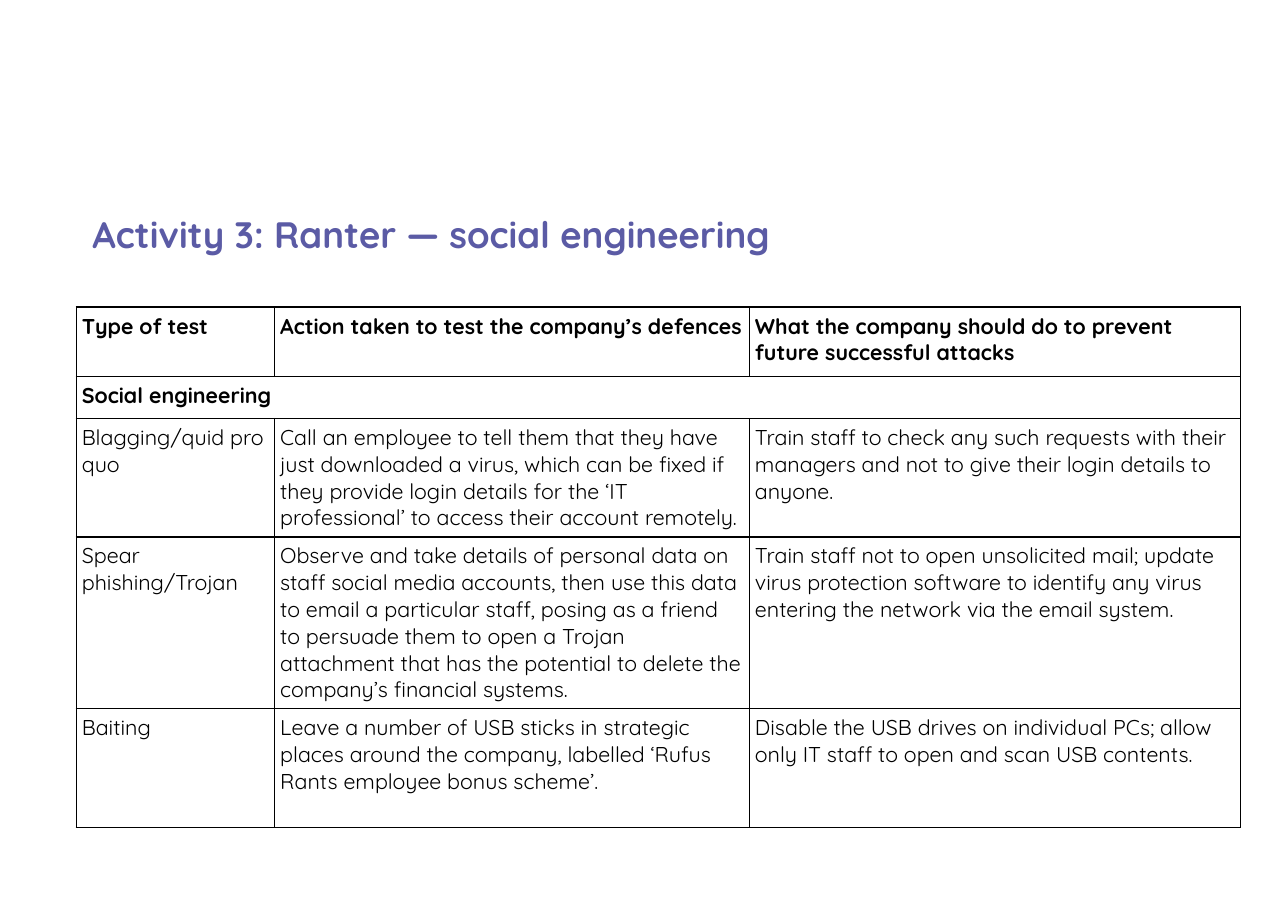
from lxml.etree import SubElement
from pptx import Presentation
from pptx.dml.color import RGBColor
from pptx.oxml.ns import qn
from pptx.util import Pt

FONT = "Quicksand"
PURPLE = RGBColor(0x5B, 0x5B, 0xA5)
BLACK = RGBColor(0, 0, 0)

COLUMN_WIDTHS = (129.6, 310.3, 321.1)
ROW_HEIGHTS = (45.5, 27.4, 77.4, 112.2, 77.6)
SECTION_ROW = 1
TESTS = (
    ("Type of test",
     "Action taken to test the company’s defences",
     "What the company should do to prevent future successful attacks"),
    ("Social engineering",),
    ("Blagging/quid pro quo",
     "Call an employee to tell them that they have just downloaded a virus, "
     "which can be fixed if they provide login details for the "
     "‘IT professional’ to access their account remotely.",
     "Train staff to check any such requests with their managers and not to "
     "give their login details to anyone."),
    ("Spear phishing/Trojan",
     "Observe and take details of personal data on staff social media "
     "accounts, then use this data to email a particular staff, posing as a "
     "friend to persuade them to open a Trojan attachment that has the "
     "potential to delete the company’s financial systems.",
     "Train staff not to open unsolicited mail; update virus protection "
     "software to identify any virus entering the network via the email "
     "system."),
    ("Baiting",
     "Leave a number of USB sticks in strategic places around the company, "
     "labelled ‘Rufus Rants employee bonus scheme’.",
     "Disable the USB drives on individual PCs; allow only IT staff to open "
     "and scan USB contents."),
)


def write(frame, text, size=14, color=BLACK, bold=False, spacing=None, before=None):
    paragraph = frame.paragraphs[0]
    paragraph.line_spacing = spacing
    paragraph.space_before = None if before is None else Pt(before)
    run = paragraph.add_run()
    run.text = text
    run.font.name = FONT
    run.font.size = Pt(size)
    run.font.bold = bold
    run.font.color.rgb = color


def set_margins(holder, margin):
    """Give a cell or text frame the same margin on all four sides."""
    holder.margin_left = holder.margin_right = Pt(margin)
    holder.margin_top = holder.margin_bottom = Pt(margin)


def outline(cell, width=1):
    """Draw all four borders of a cell; they must come before its fill."""
    properties = cell._tc.get_or_add_tcPr()
    for side in ("a:lnL", "a:lnR", "a:lnT", "a:lnB"):
        border = SubElement(properties, qn(side), w=str(Pt(width)))
        fill = SubElement(border, qn("a:solidFill"))
        SubElement(fill, qn("a:srgbClr"), val=str(BLACK))


def add_title(slide, text):
    frame = slide.shapes.add_textbox(Pt(53.3), Pt(126.7), Pt(652.3), Pt(54)).text_frame
    frame.word_wrap = True
    set_margins(frame, 7.2)
    write(frame, text, size=24, color=PURPLE, bold=True, spacing=1.15, before=20)


def add_tests_table(slide):
    table = slide.shapes.add_table(
        len(TESTS), len(COLUMN_WIDTHS), Pt(49.9), Pt(200.7),
        Pt(sum(COLUMN_WIDTHS)), Pt(sum(ROW_HEIGHTS))).table
    table.first_row = table.horz_banding = False
    for column, width in zip(table.columns, COLUMN_WIDTHS):
        column.width = Pt(width)
    for row, height in zip(table.rows, ROW_HEIGHTS):
        row.height = Pt(height)
    for cell in table.iter_cells():
        set_margins(cell, 3.6)
        outline(cell)
        cell.fill.background()
    table.cell(SECTION_ROW, 0).merge(table.cell(SECTION_ROW, len(COLUMN_WIDTHS) - 1))
    for r, texts in enumerate(TESTS):
        for c, text in enumerate(texts):
            write(table.cell(r, c).text_frame, text, bold=r <= SECTION_ROW)


def main():
    deck = Presentation()
    deck.slide_width, deck.slide_height = Pt(841.7), Pt(595.4)
    slide = deck.slides.add_slide(deck.slide_layouts[6])
    add_title(slide, "Activity 3: Ranter — social engineering")
    add_tests_table(slide)
    deck.save("out.pptx")


if __name__ == "__main__":
    main()
